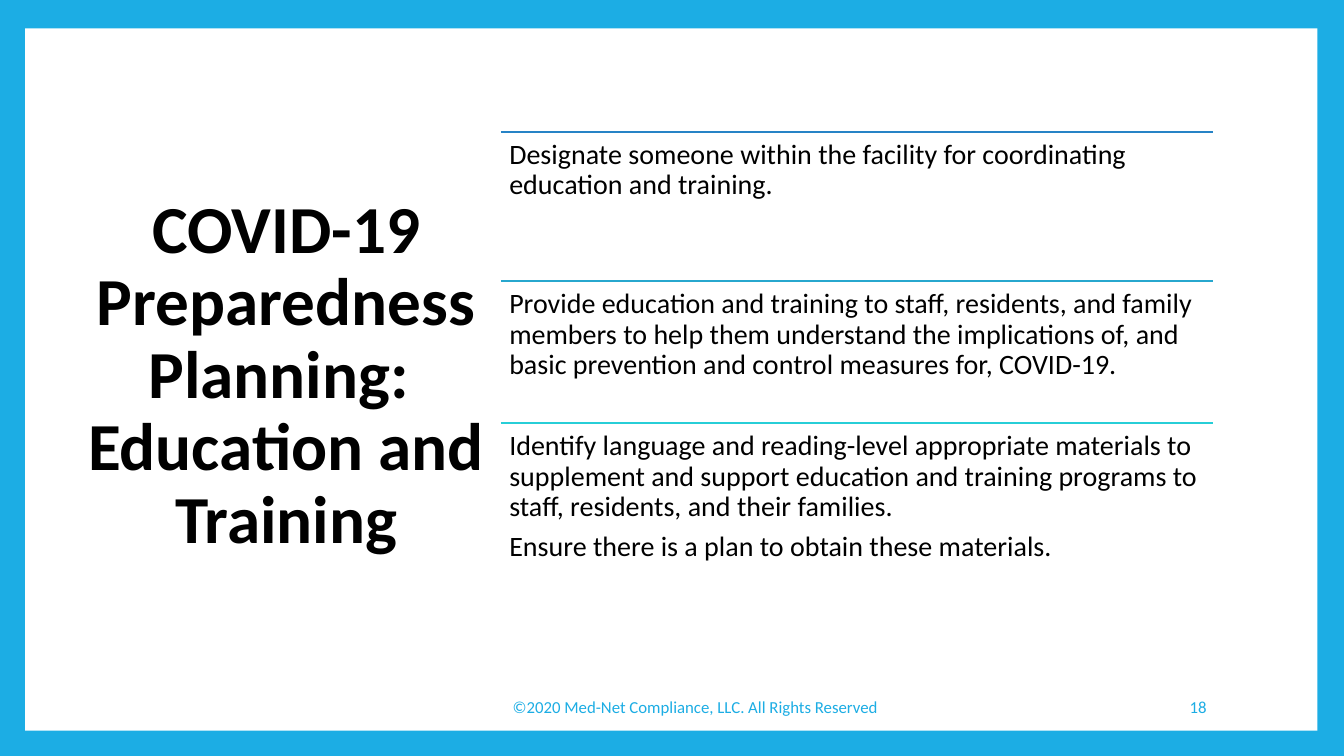
from pptx import Presentation
from pptx.dml.color import RGBColor
from pptx.enum.shapes import MSO_CONNECTOR, MSO_SHAPE
from pptx.enum.text import MSO_ANCHOR as Anchor, MSO_AUTO_SIZE as AutoSize, PP_ALIGN as Align
from pptx.oxml.ns import qn
from pptx.util import Pt

COLORS = {
    "frame": "1CADE4",
    "panel": "FFFFFF",
    "text": "000000",
    "designate": "2683C6",
    "provide": "27A7CE",
    "identify": "27CED7",
}
FONT = "Calibri"
STEPS_LEFT, STEPS_WIDTH = 357.8, 508.3
FOOTER_TOP, FOOTER_HEIGHT = 490.3, 28.8

# Rule colour, top, height, paragraphs
STEPS = [
    ("designate", 94.3, 106.6,
     ["Designate someone within the facility for coordinating education and training."]),
    ("provide", 200.9, 101.5,
     ["Provide education and training to staff, residents, and family members to help "
      "them understand the implications of, and basic prevention and control measures "
      "for, COVID-19."]),
    ("identify", 302.4, 143.3,
     ["Identify language and reading-level appropriate materials to supplement and "
      "support education and training programs to staff, residents, and their families.",
      "Ensure there is a plan to obtain these materials."]),
]


def color(name):
    return RGBColor.from_string(COLORS[name])


def write(shape, paragraphs, *, size, ink="text", bold=False, align=Align.LEFT,
          anchor=Anchor.TOP, line_spacing=1.0, after=0, inset=(7.2, 3.6)):
    frame = shape.text_frame
    frame.word_wrap = True
    frame.auto_size = AutoSize.NONE
    frame.vertical_anchor = anchor
    frame.margin_left = frame.margin_right = Pt(inset[0])
    frame.margin_top = frame.margin_bottom = Pt(inset[1])
    for index, text in enumerate(paragraphs):
        paragraph = frame.add_paragraph() if index else frame.paragraphs[0]
        paragraph.text = text
        paragraph.alignment = align
        paragraph.line_spacing = line_spacing
        paragraph.space_before = Pt(0)
        paragraph.space_after = Pt(after)
        for part in [paragraph, *paragraph.runs]:
            part.font.name = FONT
            part.font.size = Pt(size)
            part.font.bold = bold
            part.font.color.rgb = color(ink)


def add_text(slide, left, top, width, height, paragraphs, **text_format):
    box = slide.shapes.add_textbox(Pt(left), Pt(top), Pt(width), Pt(height))
    write(box, paragraphs, **text_format)


def add_panel(slide):
    panel = slide.shapes.add_shape(MSO_SHAPE.RECTANGLE, Pt(18), Pt(20.2), Pt(923), Pt(501.8))
    panel.shadow.inherit = False
    panel.fill.solid()
    panel.fill.fore_color.rgb = color("panel")
    panel.line.fill.background()
    # Send behind the title
    tree = slide.shapes._spTree
    tree.insert(2, panel._element)


def add_title(slide, text):
    title = slide.shapes.title
    title.left, title.top = Pt(51.1), Pt(48.2)
    title.width, title.height = Pt(306.7), Pt(441.4)
    write(title, [text], size=48, bold=True, align=Align.CENTER,
          anchor=Anchor.MIDDLE, line_spacing=0.9)


def add_rule(slide, top, ink):
    rule = slide.shapes.add_connector(MSO_CONNECTOR.STRAIGHT, Pt(STEPS_LEFT), Pt(top),
                                      Pt(STEPS_LEFT + STEPS_WIDTH), Pt(top))
    rule.line.color.rgb = color(ink)
    rule.line.width = Pt(1.5)
    properties = rule._element.spPr
    properties.append(properties.makeelement(qn("a:effectLst"), {}))


def add_step(slide, ink, top, height, paragraphs):
    add_rule(slide, top, ink)
    add_text(slide, STEPS_LEFT, top, STEPS_WIDTH, height, paragraphs, size=20,
             line_spacing=0.9, after=7, inset=(6, 6))


def add_footer(slide, left, width, text, align):
    add_text(slide, left, FOOTER_TOP, width, FOOTER_HEIGHT, [text], size=12, ink="frame",
             align=align, anchor=Anchor.MIDDLE, after=6)


def main():
    deck = Presentation()
    deck.slide_width, deck.slide_height = Pt(960), Pt(540)
    slide = deck.slides.add_slide(deck.slide_layouts[5])

    # Framed background
    slide.background.fill.solid()
    slide.background.fill.fore_color.rgb = color("frame")
    add_panel(slide)

    # Title and planning steps
    add_title(slide, "COVID-19 Preparedness Planning: \vEducation and Training")
    for step in STEPS:
        add_step(slide, *step)

    # Footer
    add_footer(slide, 311, 371.5, "©2020 Med-Net Compliance, LLC. All Rights Reserved",
               Align.CENTER)
    add_footer(slide, 734.4, 134.6, "18", Align.RIGHT)

    deck.save("out.pptx")


if __name__ == "__main__":
    main()
